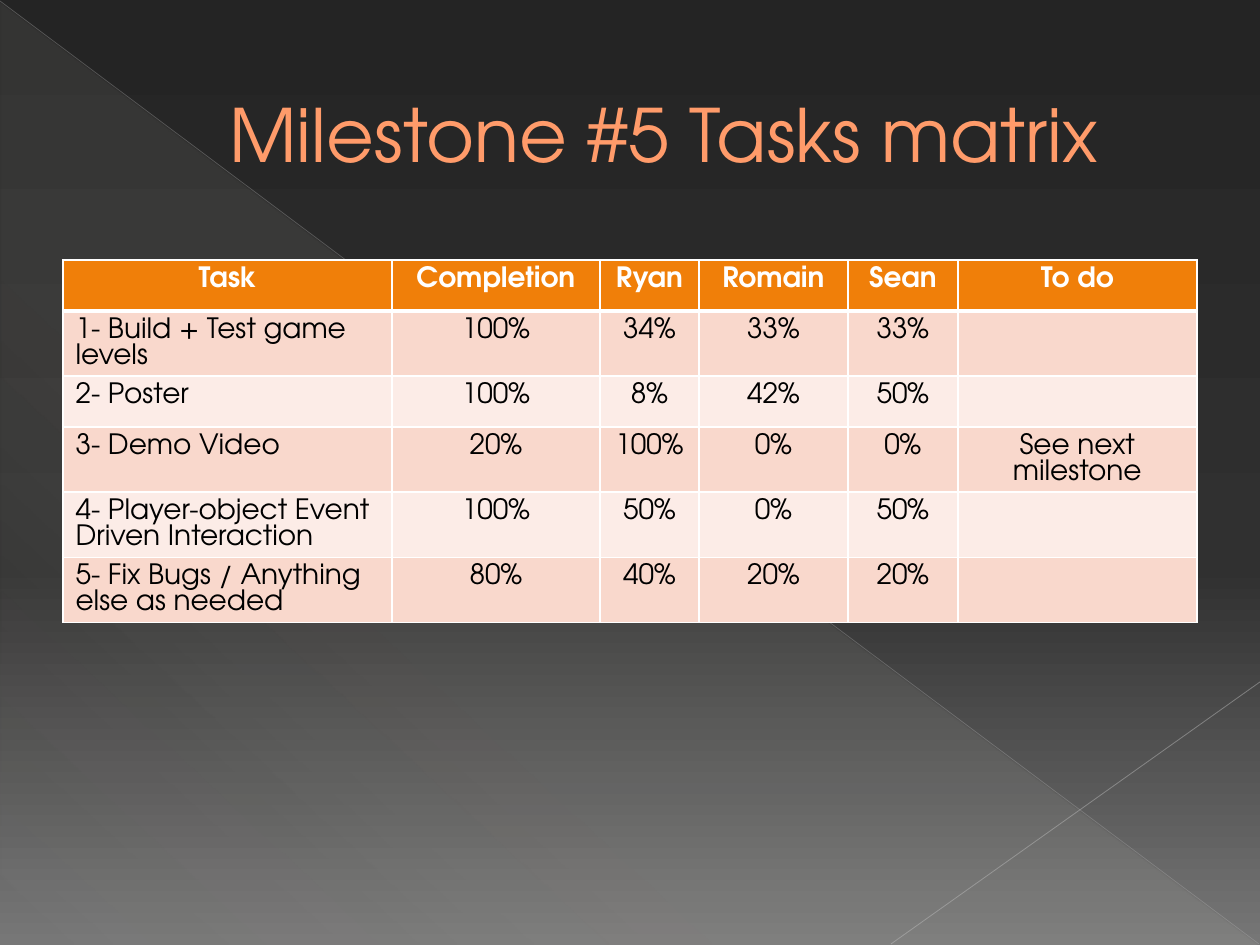
from lxml.etree import SubElement
from pptx import Presentation
from pptx.dml.color import RGBColor
from pptx.enum.shapes import MSO_CONNECTOR, MSO_SHAPE
from pptx.enum.text import MSO_ANCHOR, PP_ALIGN
from pptx.oxml.ns import qn
from pptx.util import Pt

PX = 914400 // 126
FONT = "TeX Gyre Adventor"
WHITE = RGBColor(0xFF, 0xFF, 0xFF)
BLACK = RGBColor(0x00, 0x00, 0x00)
SALMON = RGBColor(0xFF, 0x9B, 0x6A)
BROWN = RGBColor(0xA6, 0x58, 0x06)
ORANGE = RGBColor(0xF0, 0x7F, 0x09)
PINK = RGBColor(0xF9, 0xD8, 0xCC)
PALE_PINK = RGBColor(0xFC, 0xEC, 0xE7)
DARK = RGBColor(0x24, 0x24, 0x24)
CHARCOAL = RGBColor(0x30, 0x30, 0x30)
GRAY = RGBColor(0x76, 0x76, 0x76)
CREAM = RGBColor(0xE3, 0xDE, 0xD1)
SILVER = RGBColor(0xB6, 0xB6, 0xB6)
LIGHT_GRAY = RGBColor(0xBF, 0xBF, 0xBF)

COLUMNS = [329, 208, 99, 149, 110, 239]
ROW_HEIGHT = 51
TASKS = [
    ["Task", "Completion", "Ryan", "Romain", "Sean", "To do"],
    ["1- Build + Test game levels", "100%", "34%", "33%", "33%", ""],
    ["2- Poster", "100%", "8%", "42%", "50%", ""],
    ["3- Demo Video", "20%", "100%", "0%", "0%", "See next milestone"],
    ["4- Player-object Event Driven Interaction", "100%", "50%", "0%", "50%", ""],
    ["5- Fix Bugs / Anything else as needed", "80%", "40%", "20%", "20%", ""],
]


def add_color(parent, color, alpha=100):
    clr = SubElement(parent, qn("a:srgbClr"), val=str(color))
    if alpha < 100:
        SubElement(clr, qn("a:alpha"), val=str(alpha * 1000))


def add_line(parent, tag, color, width):
    ln = SubElement(parent, qn(tag), w=str(Pt(width)))
    add_color(SubElement(ln, qn("a:solidFill")), color)


class Deck:
    def __init__(self, width, height):
        self.prs = Presentation()
        self.prs.slide_width, self.prs.slide_height = width * PX, height * PX
        self.s = self.prs.slides.add_slide(self.prs.slide_layouts[6])

    def gradient(self, fill, stops, angle):
        """Fill with (position, colour, opacity) stops, angle clockwise."""
        fill.gradient()
        fill.gradient_angle = -angle % 360
        gs_lst = fill.gradient_stops[0]._gs.getparent()
        for gs in list(gs_lst):
            gs_lst.remove(gs)
        for pos, color, alpha in stops:
            add_color(SubElement(gs_lst, qn("a:gs"), pos=str(pos * 1000)), color, alpha)

    def background(self, stops):
        self.gradient(self.s.background.fill, stops, 90)

    def triangle(self, x, y, w, h, stops, angle):
        sp = self.s.shapes.add_shape(MSO_SHAPE.RIGHT_TRIANGLE, x * PX, y * PX, w * PX, h * PX)
        sp.shadow.inherit = False
        sp.line.fill.background()
        self.gradient(sp.fill, stops, angle)

    def line(self, x1, y1, x2, y2, color, width, alpha):
        cn = self.s.shapes.add_connector(MSO_CONNECTOR.STRAIGHT, x1 * PX, y1 * PX, x2 * PX, y2 * PX)
        cn.line.width = Pt(width)
        cn.line.color.rgb = color
        clr = cn.line._ln.find(".//" + qn("a:srgbClr"))
        SubElement(clr, qn("a:alpha"), val=str(alpha * 1000))
        SubElement(cn._element.spPr, qn("a:effectLst"))

    def style(self, p, size, color, bold=False, align=PP_ALIGN.CENTER):
        p.alignment = align
        p.font.name, p.font.size = FONT, Pt(size)
        p.font.bold, p.font.color.rgb = bold, color

    def title(self, x, y, w, h, text, indent):
        tf = self.s.shapes.add_textbox(x * PX, y * PX, w * PX, h * PX).text_frame
        tf.word_wrap = True
        tf.vertical_anchor = MSO_ANCHOR.MIDDLE
        p = tf.paragraphs[0]
        self.style(p, 42, SALMON)
        p._p.get_or_add_pPr().set("marL", str(indent * PX))
        r = p.add_run()
        r.text = text
        add_line(r._r.get_or_add_rPr(), "a:ln", BROWN, 0.5)

    def cell(self, cell, text, fill, color, bold, align, bottom):
        p = cell.text_frame.paragraphs[0]
        p.text = text
        self.style(p, 16, color, bold, align)
        p.line_spacing = Pt(15)
        tc_pr = cell._tc.get_or_add_tcPr()
        for side, width in zip("LRTB", (1, 1, 1, bottom)):
            add_line(tc_pr, f"a:ln{side}", WHITE, width)
        cell.fill.solid()
        cell.fill.fore_color.rgb = fill

    def table(self, x, y, columns, row_height, rows):
        table = self.s.shapes.add_table(len(rows), len(columns), x * PX, y * PX,
                                        sum(columns) * PX, row_height * len(rows) * PX).table
        for col, width in zip(table.columns, columns):
            col.width = width * PX
        for i, row in enumerate(rows):
            header = i == 0
            fill = ORANGE if header else PINK if i % 2 else PALE_PINK
            for j, text in enumerate(row):
                align = PP_ALIGN.LEFT if j == 0 and not header else PP_ALIGN.CENTER
                self.cell(table.cell(i, j), text, fill, WHITE if header else BLACK,
                          header, align, 3 if header else 1)


def main():
    deck = Deck(1260, 945)

    # Backdrop
    deck.background([(0, DARK, 100), (60, CHARCOAL, 100), (100, GRAY, 100)])
    deck.triangle(1, 3, 1257, 942, [(0, CREAM, 10), (70, CREAM, 8), (100, CREAM, 1)], 133)
    deck.line(0, 1, 1259, 944, SILVER, 0.39, 35)
    deck.line(1260, 682, 891, 944, LIGHT_GRAY, 0.47, 45)

    # Title and task matrix
    deck.title(63, 37, 1134, 193, "Milestone #5 Tasks matrix", 67)
    deck.table(63, 260, COLUMNS, ROW_HEIGHT, TASKS)

    deck.prs.save("out.pptx")


if __name__ == "__main__":
    main()
